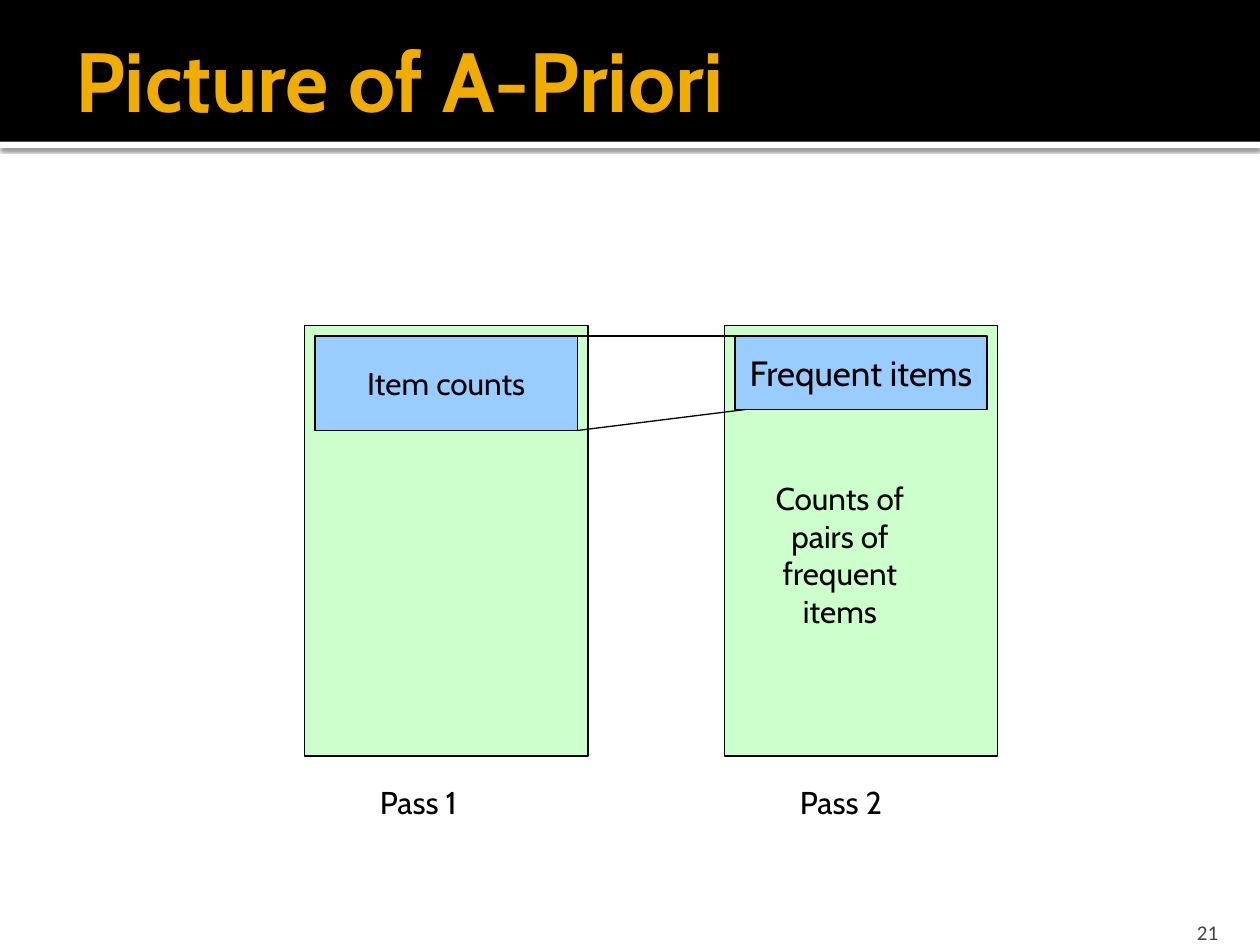
from lxml import etree
from pptx import Presentation
from pptx.dml.color import RGBColor
from pptx.enum.shapes import MSO_CONNECTOR, MSO_SHAPE
from pptx.enum.text import MSO_ANCHOR as ANCHOR, PP_ALIGN as ALIGN
from pptx.oxml.ns import qn
from pptx.util import Inches, Pt

BLACK = RGBColor(0x00, 0x00, 0x00)
WHITE = RGBColor(0xFF, 0xFF, 0xFF)
GOLD = RGBColor(0xF0, 0xAD, 0x00)
GREY = RGBColor(0x45, 0x45, 0x45)
GREEN = RGBColor(0xCC, 0xFF, 0xCC)
BLUE = RGBColor(0x99, 0xCC, 0xFF)

WIDTH, HEIGHT = Inches(10), Inches(7.5)
COLUMNS, ROWS = 120, 90
HEADER_ROWS = 13.5
MEMORY_TOP, MEMORY_ROWS = 31, 41
ITEMS_TOP = MEMORY_TOP + 1


def grid(*cells):
    """Turn alternating columns and rows into slide lengths."""
    units = (WIDTH / COLUMNS, HEIGHT / ROWS)
    return [round(cell * units[i % 2]) for i, cell in enumerate(cells)]


def write(shape, text, size=18, color=BLACK, font="Cabin", bold=False,
          align=ALIGN.LEFT, anchor=ANCHOR.TOP, wrap=False):
    tf = shape.text_frame
    tf.text = text
    tf.word_wrap = wrap
    tf.vertical_anchor = anchor
    for p in tf.paragraphs:
        p.alignment = align
        for r in p.runs:
            r.font.name, r.font.size = font, Pt(size)
            r.font.bold, r.font.color.rgb = bold, color
    return tf


def add_label(s, cells, text, **style):
    return write(s.shapes.add_textbox(*grid(*cells)), text, **style)


def add_box(s, cells, fill, outlined=True):
    sp = s.shapes.add_shape(MSO_SHAPE.RECTANGLE, *grid(*cells))
    sp.shadow.inherit = False
    sp.fill.solid()
    sp.fill.fore_color.rgb = fill
    if outlined:
        sp.line.color.rgb, sp.line.width = BLACK, Pt(0.75)
    else:
        sp.line.fill.background()
    return sp


def add_items(s, cells, text, size):
    write(add_box(s, cells, BLUE), text, size=size,
          align=ALIGN.CENTER, anchor=ANCHOR.MIDDLE)


def add_line(s, *ends):
    line = s.shapes.add_connector(MSO_CONNECTOR.STRAIGHT, *grid(*ends))
    line.line.color.rgb, line.line.width = BLACK, Pt(0.75)
    etree.SubElement(line._element.spPr, qn("a:effectLst"))


def drop_shadow(sp):
    """Give a shape a soft shadow straight below it."""
    effects = sp._element.spPr.find(qn("a:effectLst"))
    shadow = etree.SubElement(effects, qn("a:outerShdw"), blurRad=str(Pt(2.5)),
                              dist=str(Pt(0.8)), dir="5400000",
                              algn="tl", rotWithShape="0")
    color = etree.SubElement(shadow, qn("a:srgbClr"), val=str(BLACK))
    etree.SubElement(color, qn("a:alpha"), val="60000")


def add_header(s, title):
    drop_shadow(add_box(s, (0, HEADER_ROWS, COLUMNS, 0.6), WHITE, outlined=False))
    add_box(s, (0, 0, COLUMNS, HEADER_ROWS), BLACK, outlined=False)
    tf = add_label(s, (6, 2, 114, 11), title, size=48, color=GOLD, bold=True,
                   anchor=ANCHOR.MIDDLE, wrap=True)
    tf.margin_right = Inches(0.05)


def add_page_number(s, number):
    tf = add_label(s, (107.6, 86.4, 9.6, 3.6), number, size=12, color=GREY,
                   font="Calibri", align=ALIGN.RIGHT, anchor=ANCHOR.BOTTOM, wrap=True)
    tf.margin_bottom = 0


def add_pass(s, left, columns, name, label_left):
    add_box(s, (left, MEMORY_TOP, columns, MEMORY_ROWS), GREEN)
    add_label(s, (label_left, 74, 14, 6), name, wrap=True)


def main():
    prs = Presentation()
    prs.slide_width, prs.slide_height = WIDTH, HEIGHT
    s = prs.slides.add_slide(prs.slide_layouts[6])
    add_header(s, "Picture of A-Priori")
    add_page_number(s, "21")

    add_pass(s, 29, 27, "Pass 1", 35)
    add_pass(s, 69, 26, "Pass 2", 75)
    add_items(s, (30, ITEMS_TOP, 25, 9), "Item counts", 18)
    add_items(s, (70, ITEMS_TOP, 24, 7), "Frequent items", 20)
    add_label(s, (71, 45, 18, 20), "Counts of\npairs of\nfrequent\nitems",
              align=ALIGN.CENTER, wrap=True)

    add_line(s, 55, ITEMS_TOP, 70, ITEMS_TOP)
    add_line(s, 55, ITEMS_TOP + 9, 71, ITEMS_TOP + 7)
    prs.save("out.pptx")


if __name__ == "__main__":
    main()
